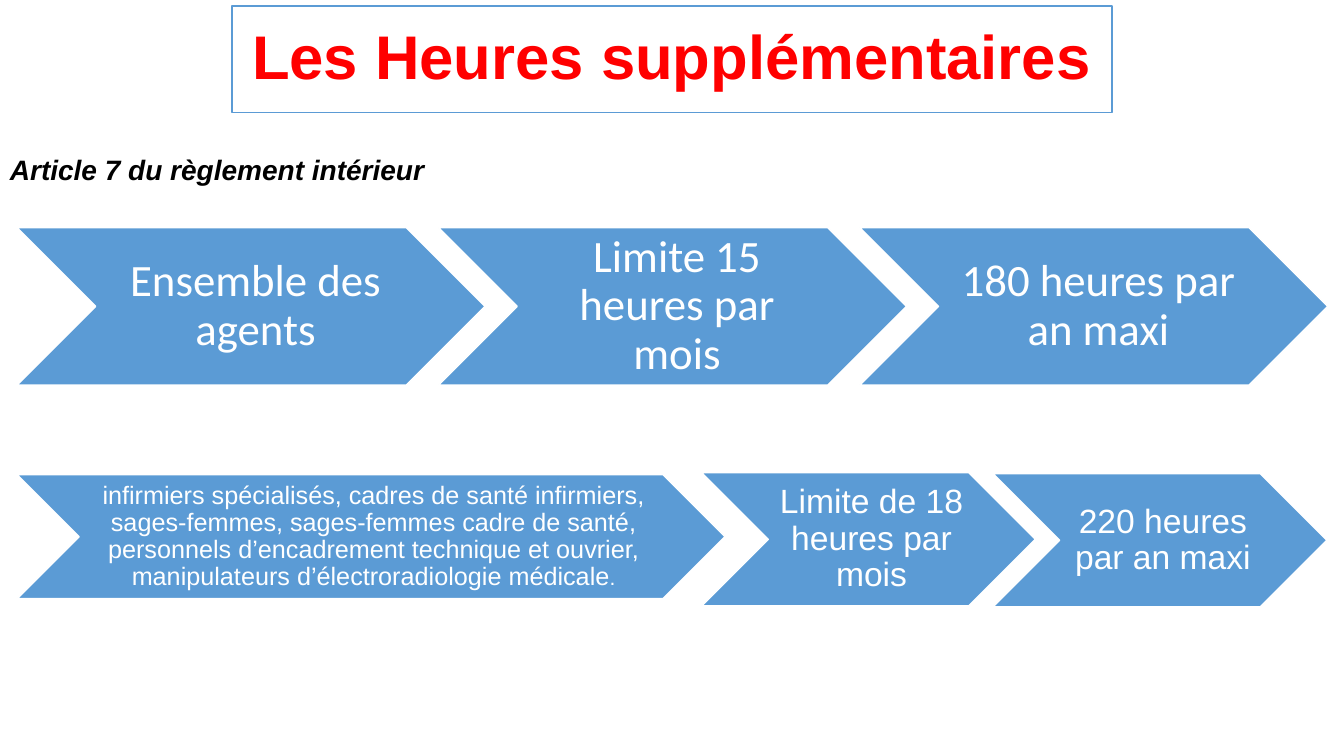
from pptx import Presentation
from pptx.dml.color import RGBColor
from pptx.enum.shapes import MSO_SHAPE
from pptx.enum.text import MSO_ANCHOR, PP_ALIGN
from pptx.util import Pt

EMU_PER_PX = 9144
COLORS = {"red": "FF0000", "black": "000000", "white": "FFFFFF", "blue": "5B9BD5"}


def px(n):
    return n * EMU_PER_PX


def rgb(name):
    return RGBColor.from_string(COLORS[name])


def write(tf, text, size, color="white", font="Arial", bold=False, italic=False,
          align=PP_ALIGN.CENTER, anchor=MSO_ANCHOR.MIDDLE, insets=(10, 5, 10, 5)):
    tf.word_wrap = True
    tf.vertical_anchor = anchor
    tf.margin_left, tf.margin_top, tf.margin_right, tf.margin_bottom = map(px, insets)
    p = tf.paragraphs[0]
    p.alignment = align
    p.line_spacing = 0.9
    r = p.add_run()
    r.text = text
    r.font.size = Pt(size)
    r.font.name = font
    r.font.bold = bold
    r.font.italic = italic
    r.font.color.rgb = rgb(color)
    return p


class Deck:
    def __init__(self, width, height):
        self.prs = Presentation()
        self.prs.slide_width = px(width)
        self.prs.slide_height = px(height)
        self.s = self.prs.slides.add_slide(self.prs.slide_layouts[6])

    def shape(self, kind, box, fill, line):
        sp = self.s.shapes.add_shape(kind, *map(px, box))
        sp.shadow.inherit = False
        sp.fill.solid()
        sp.fill.fore_color.rgb = rgb(fill)
        sp.line.color.rgb = rgb(line)
        sp.line.width = Pt(1)
        return sp

    def title(self, box, text):
        sp = self.shape(MSO_SHAPE.RECTANGLE, box, "white", "blue")
        write(sp.text_frame, text, 44, color="red", bold=True)

    def subtitle(self, box, text):
        sp = self.s.shapes.add_textbox(*map(px, box))
        write(sp.text_frame, text, 20, color="black", bold=True, italic=True,
              align=PP_ALIGN.LEFT, anchor=MSO_ANCHOR.TOP)

    def chevron(self, box, text, size, font, left, edge):
        sp = self.shape(MSO_SHAPE.CHEVRON, box, "blue", "white")
        return write(sp.text_frame, text, size, font=font,
                     insets=(left, edge, edge, edge))


def main():
    deck = Deck(1333, 750)
    deck.title((230, 6, 873, 106), "Les Heures supplémentaires")
    deck.subtitle((0, 150, 1333, 570), "Article 7 du règlement intérieur")

    all_staff = ["Ensemble des agents", "Limite 15 heures par mois",
                 "180 heures par an maxi"]
    for i, text in enumerate(all_staff):
        deck.chevron((17 + 418 * i, 226, 464, 156), text, 32, "Calibri", 14, 5)

    p = deck.chevron(
        (17, 471, 702, 123),
        "infirmiers spécialisés, cadres de santé infirmiers, sages-femmes, "
        "sages-femmes cadre de santé, personnels d’encadrement technique et ouvrier, "
        "manipulateurs d’électroradiologie médicale", 18, "Arial", 8, 3)
    r = p.add_run()
    r.text = "."
    r.font.size = Pt(15)
    r.font.name = "Arial"
    r.font.color.rgb = rgb("white")

    special_limits = [(696, 469, "Limite de 18 heures par mois"),
                      (985, 470, "220 heures par an maxi")]
    for left, top, text in special_limits:
        deck.chevron((left, top, 331, 132), text, 24, "Arial", 10, 4)

    deck.prs.save("out.pptx")


if __name__ == "__main__":
    main()
